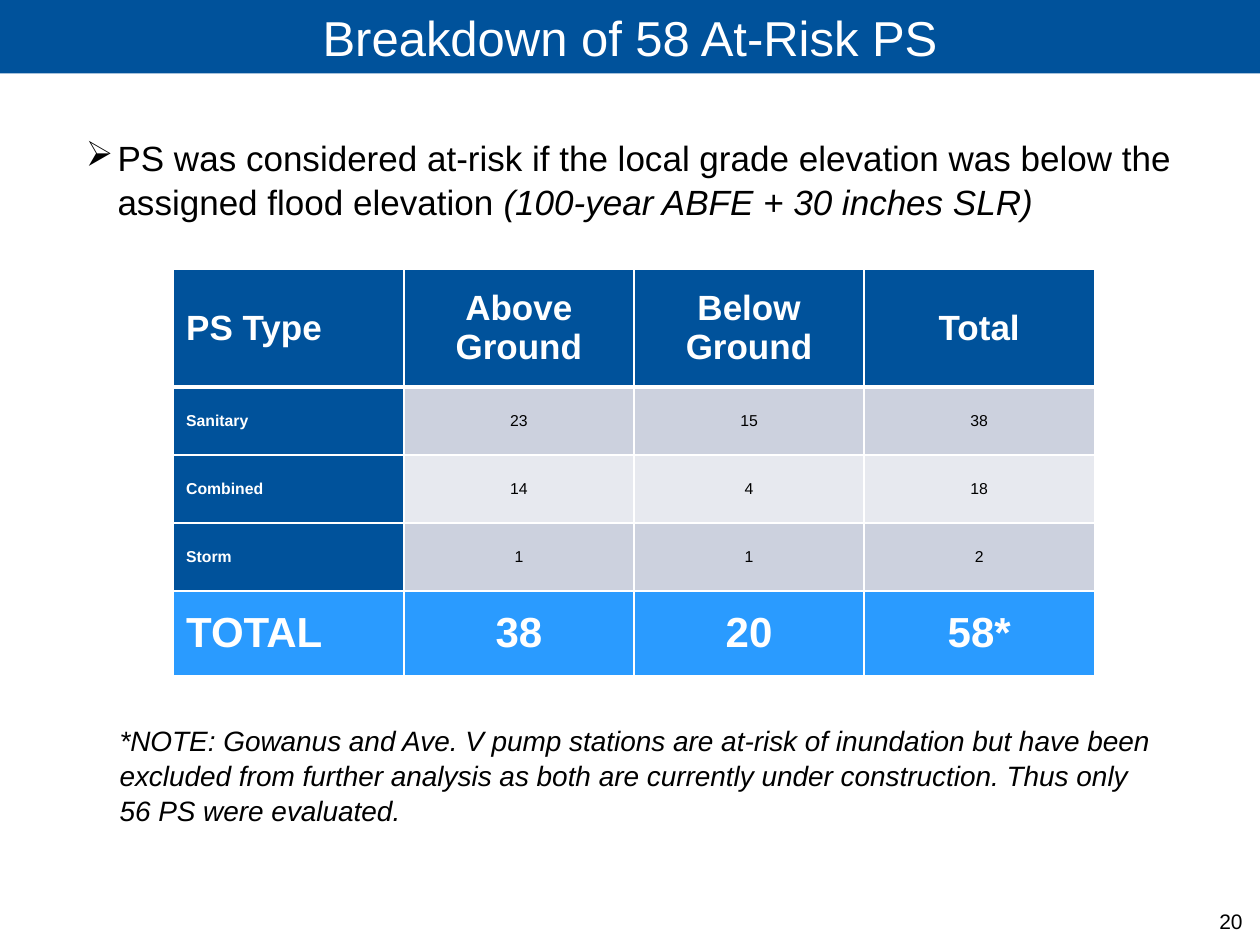
import pptx
import pptx.dml.color
import pptx.enum.shapes
import pptx.enum.text
import pptx.oxml
import pptx.oxml.ns
import pptx.util
from pptx.util import Cm

ALIGN = pptx.enum.text.PP_ALIGN
ANCHOR = pptx.enum.text.MSO_ANCHOR
COLORS = {
    "navy": "00529B", "sky": "2A9BFF", "band": "CCD1DE", "pale": "E7E9EF",
    "white": "FFFFFF", "black": "000000",
}
TITLE = "Breakdown of 58 At-Risk PS"
CRITERION = [
    ("PS was considered at-risk if the local grade elevation was below the "
     "assigned flood elevation ", False),
    ("(100-year ABFE + 30 inches SLR)", True),
]
NOTE = ("*NOTE: Gowanus and Ave. V pump stations are at-risk of inundation but have been "
        "excluded from further analysis as both are currently under construction. "
        "Thus only 56 PS were evaluated.")
PAGE_NUMBER = "20"

# values, row height in cm, text size, fill of the value cells
STATION_ROWS = [
    (["PS Type", "Above Ground", "Below Ground", "Total"], 2.38, 20, "navy"),
    (["Sanitary", "23", "15", "38"], 1.37, 9, "band"),
    (["Combined", "14", "4", "18"], 1.37, 9, "pale"),
    (["Storm", "1", "1", "2"], 1.37, 9, "band"),
    (["TOTAL", "38", "20", "58*"], 1.71, 24, "sky"),
]
COLUMN_WIDTH = 4.64


def rgb(name):
    return pptx.dml.color.RGBColor.from_string(COLORS[name])


def add_run(paragraph, text, size, color="black", bold=False, italic=False):
    run = paragraph.add_run()
    run.text = text
    run.font.name = "Arial"
    run.font.size = pptx.util.Pt(size)
    run.font.bold = bold
    run.font.italic = italic
    run.font.color.rgb = rgb(color)


def add_text_box(slide, left, top, width, height, anchor=ANCHOR.TOP):
    """Add a wrapping text box, measured in cm, and return its first paragraph."""
    frame = slide.shapes.add_textbox(Cm(left), Cm(top), Cm(width), Cm(height)).text_frame
    frame.word_wrap = True
    frame.vertical_anchor = anchor
    return frame.paragraphs[0]


def add_arrow_bullet(paragraph):
    properties = paragraph._p.get_or_add_pPr()
    indent = Cm(0.64)
    properties.set("marL", str(indent))
    properties.set("indent", str(-indent))
    properties.append(pptx.oxml.parse_xml(
        f'<a:buChar {pptx.oxml.ns.nsdecls("a")} char="➢"/>'))


def set_borders(cell, points_by_side):
    properties = cell._tc.get_or_add_tcPr()
    for position, (side, points) in enumerate(points_by_side.items()):
        properties.insert(position, pptx.oxml.parse_xml(
            f'<a:ln{side} {pptx.oxml.ns.nsdecls("a")} w="{pptx.util.Pt(points)}">'
            f'<a:solidFill><a:srgbClr val="{COLORS["white"]}"/></a:solidFill></a:ln{side}>'))


def add_station_table(slide, left, top):
    column_count = len(STATION_ROWS[0][0])
    height = sum(row[1] for row in STATION_ROWS)
    table = slide.shapes.add_table(
        len(STATION_ROWS), column_count, Cm(left), Cm(top),
        Cm(COLUMN_WIDTH * column_count), Cm(height)).table
    for column in table.columns:
        column.width = Cm(COLUMN_WIDTH)
    for row_index, (values, row_height, size, fill) in enumerate(STATION_ROWS):
        table.rows[row_index].height = Cm(row_height)
        is_detail = fill in ("band", "pale")
        for column_index, value in enumerate(values):
            is_label = column_index == 0
            strong = is_label or not is_detail
            cell = table.cell(row_index, column_index)
            cell.vertical_anchor = ANCHOR.MIDDLE
            cell.fill.solid()
            cell.fill.fore_color.rgb = rgb("navy" if is_label and is_detail else fill)
            set_borders(cell, {"L": 1, "R": 1, "T": 3 if row_index == 1 else 1,
                               "B": 3 if row_index == 0 else 1})
            paragraph = cell.text_frame.paragraphs[0]
            paragraph.alignment = ALIGN.LEFT if is_label else ALIGN.CENTER
            add_run(paragraph, value, size, "white" if strong else "black", bold=strong)


def main():
    presentation = pptx.Presentation()
    presentation.slide_width, presentation.slide_height = Cm(25.4), Cm(19.05)
    slide = presentation.slides.add_slide(presentation.slide_layouts[6])

    banner = slide.shapes.add_shape(
        pptx.enum.shapes.MSO_SHAPE.RECTANGLE, 0, 0, presentation.slide_width, Cm(1.48))
    banner.shadow.inherit = False
    banner.fill.solid()
    banner.fill.fore_color.rgb = rgb("navy")
    banner.line.fill.background()

    title = add_text_box(slide, 2.24, 0, 20.92, 1.48, ANCHOR.MIDDLE)
    title.alignment = ALIGN.CENTER
    add_run(title, TITLE, 28, "white")

    criterion = add_text_box(slide, 1.48, 2.6, 23.06, 1.93)
    criterion.line_spacing = 1.04
    add_arrow_bullet(criterion)
    for text, italic in CRITERION:
        add_run(criterion, text, 20, italic=italic)

    add_station_table(slide, 3.5, 5.42)

    note = add_text_box(slide, 2.16, 14.43, 21.46, 2.31)
    note.line_spacing = 1.04
    add_run(note, NOTE, 16, italic=True)

    add_run(add_text_box(slide, 24.33, 18.2, 1.07, 0.84), PAGE_NUMBER, 12)

    presentation.save("out.pptx")


if __name__ == "__main__":
    main()
